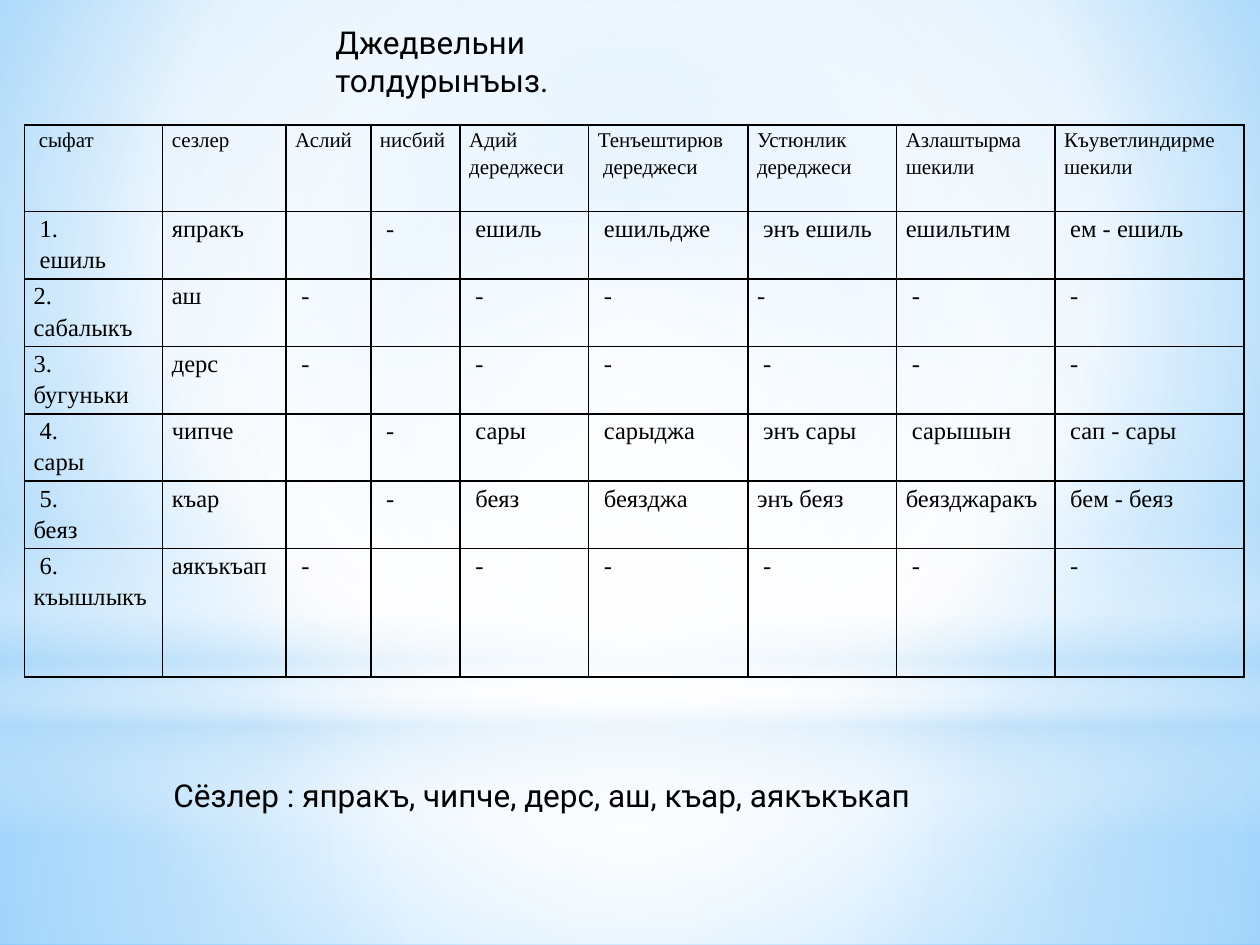
from dataclasses import dataclass

import pptx
import pptx.dml.color
import pptx.enum.shapes
import pptx.enum.text
import pptx.oxml
import pptx.oxml.ns
import pptx.util

Pt = pptx.util.Pt
qn = pptx.oxml.ns.qn
NS = pptx.oxml.ns.nsdecls("a")
SHAPE = pptx.enum.shapes.MSO_SHAPE
SERIF, SANS, BLACK = "Times New Roman", "Roboto", "000000"
CENTER = (50, 50, 50, 50)


@dataclass
class Stop:
    pos: int
    color: str
    alpha: int = 100


@dataclass
class Glow:
    kind: int
    top: float
    height: float
    stops: list[Stop]
    focus: tuple[int, ...] | None = CENTER


SKY = [Stop(0, "9ED5FF"), Stop(60, "FFFFFF"), Stop(100, "5BB9FF")]
GLOWS = [
    Glow(SHAPE.RECTANGLE, 402, 138,
         [Stop(0, "FFFFFF", 91), Stop(37, "FFFFFF", 76), Stop(100, "B4DCFA", 79)]),
    Glow(SHAPE.RECTANGLE, 0, 402,
         [Stop(0, "FFFFFF", 89), Stop(48, "FFFFFF", 62), Stop(100, "B4DCFA", 79)]),
    Glow(SHAPE.RECTANGLE, 297, 180,
         [Stop(0, "FFFFFF", 0), Stop(29, "FFFFFF", 30), Stop(45, "B4DCFA", 40),
          Stop(55, "FFFFFF", 26), Stop(65, "B4DCFA", 60), Stop(100, "FFFFFF", 0)], None),
    Glow(SHAPE.OVAL, 126, 402, [Stop(0, "FFFFFF"), Stop(56, "FFFFFF", 0)]),
]

COLUMNS = [79, 70.5, 48.5, 51, 73.5, 91, 85, 90.5, 108]
HEIGHTS = [49.5] + [38.5] * 5 + [73.5]
DASH = " -"
ROWS = [
    (" сыфат", "сезлер", "Аслий", "нисбий", "Адий дереджеси", "Тенъештирюв\n дереджеси",
     "Устюнлик\nдереджеси", "Азлаштырма\nшекили", "Къуветлиндирме\nшекили"),
    (" 1.\n ешиль", "япракъ", "", DASH, " ешиль", " ешильдже", " энъ ешиль",
     "ешильтим", " ем - ешиль"),
    ("2.\nсабалыкъ", "аш", DASH, "", DASH, DASH, "-", DASH, DASH),
    ("3.\nбугуньки", "дерс", DASH, "", DASH, DASH, DASH, DASH, DASH),
    (" 4.\nсары", "чипче", "", DASH, " сары", " сарыджа", " энъ сары",
     " сарышын", " сап - сары"),
    (" 5.\nбеяз", "къар", "", DASH, " беяз", " беязджа", "энъ беяз",
     "беязджаракъ", " бем - беяз"),
    (" 6.\nкъышлыкъ", "аякъкъап", DASH, "", DASH, DASH, DASH, DASH, DASH),
]


def rgb(color: str) -> pptx.dml.color.RGBColor:
    return pptx.dml.color.RGBColor.from_string(color)


def set_gradient(parent, stops: list[Stop], focus: tuple[int, ...] | None) -> None:
    gs = "".join(
        f'<a:gs pos="{st.pos * 1000}"><a:srgbClr val="{st.color}">'
        f'<a:alpha val="{st.alpha * 1000}"/></a:srgbClr></a:gs>' for st in stops)
    if focus:
        sides = " ".join(f'{k}="{v * 1000}"' for k, v in zip("ltrb", focus))
        path = f'<a:path path="circle"><a:fillToRect {sides}/></a:path>'
    else:
        path = '<a:lin ang="5400000" scaled="0"/>'
    grad = pptx.oxml.parse_xml(
        f'<a:gradFill {NS} rotWithShape="1"><a:gsLst>{gs}</a:gsLst>{path}</a:gradFill>')
    parent.replace(parent.find(qn("a:solidFill")), grad)


def add_glow(s, glow: Glow) -> None:
    sp = s.shapes.add_shape(glow.kind, 0, Pt(glow.top), Pt(720), Pt(glow.height))
    sp.shadow.inherit = False
    sp.line.fill.background()
    sp.fill.solid()
    set_gradient(sp.element.spPr, glow.stops, glow.focus)


def write(tf, text: str, font: str, size: float, spacing: float = 1.0) -> None:
    tf.text = text
    for p in tf.paragraphs:
        p.alignment = pptx.enum.text.PP_ALIGN.LEFT
        p.line_spacing = spacing
        for r in p.runs:
            r.font.name = font
            r.font.size = Pt(size)
            r.font.color.rgb = rgb(BLACK)


def set_borders(cell, color: str, width: float) -> None:
    tcPr = cell._tc.get_or_add_tcPr()
    for i, side in enumerate("LRTB"):
        tcPr.insert(i, pptx.oxml.parse_xml(
            f'<a:ln{side} {NS} w="{Pt(width)}"><a:solidFill><a:srgbClr val="{color}"/>'
            f'</a:solidFill></a:ln{side}>'))


def add_grid(s) -> None:
    frame = s.shapes.add_table(len(ROWS), len(COLUMNS), Pt(14), Pt(71.5),
                               Pt(sum(COLUMNS)), Pt(sum(HEIGHTS)))
    table = frame.table
    table.first_row = table.horz_banding = False
    for column, width in zip(table.columns, COLUMNS):
        column.width = Pt(width)
    for i, (texts, height) in enumerate(zip(ROWS, HEIGHTS)):
        table.rows[i].height = Pt(height)
        for j, text in enumerate(texts):
            cell = table.cell(i, j)
            cell.margin_left = cell.margin_right = Pt(5.2)
            cell.margin_top = cell.margin_bottom = 0
            cell.fill.background()
            set_borders(cell, BLACK, 1)
            write(cell.text_frame, text, SERIF, 14 if i else 12, 1.15)


def place_text(sp, left: float, top: float, width: float, height: float, text: str) -> None:
    sp.left, sp.top, sp.width, sp.height = Pt(left), Pt(top), Pt(width), Pt(height)
    tf = sp.text_frame
    tf.word_wrap = True
    tf.auto_size = pptx.enum.text.MSO_AUTO_SIZE.NONE
    tf.vertical_anchor = pptx.enum.text.MSO_ANCHOR.TOP
    write(tf, text, SANS, 18)


def main() -> None:
    prs = pptx.Presentation()
    prs.slide_width, prs.slide_height = Pt(720), Pt(540)
    s = prs.slides.add_slide(prs.slide_layouts[5])
    s.background.fill.solid()
    set_gradient(s.element.find(".//" + qn("p:bgPr")), SKY, (20, 10, 20, 60))
    for glow in GLOWS:
        add_glow(s, glow)
    add_grid(s)
    title = s.shapes.title
    s.shapes.element.append(title.element)
    place_text(title, 184.5, 9.5, 245, 50, "Джедвельни\u000bтолдурынъыз.".replace("\u000b", " "))
    words = s.shapes.add_textbox(0, 0, 0, 0)
    place_text(words, 92, 440, 452, 29, "Сёзлер : япракъ, чипче, дерс, аш, къар, аякъкъкап")
    prs.save("out.pptx")


if __name__ == "__main__":
    main()
